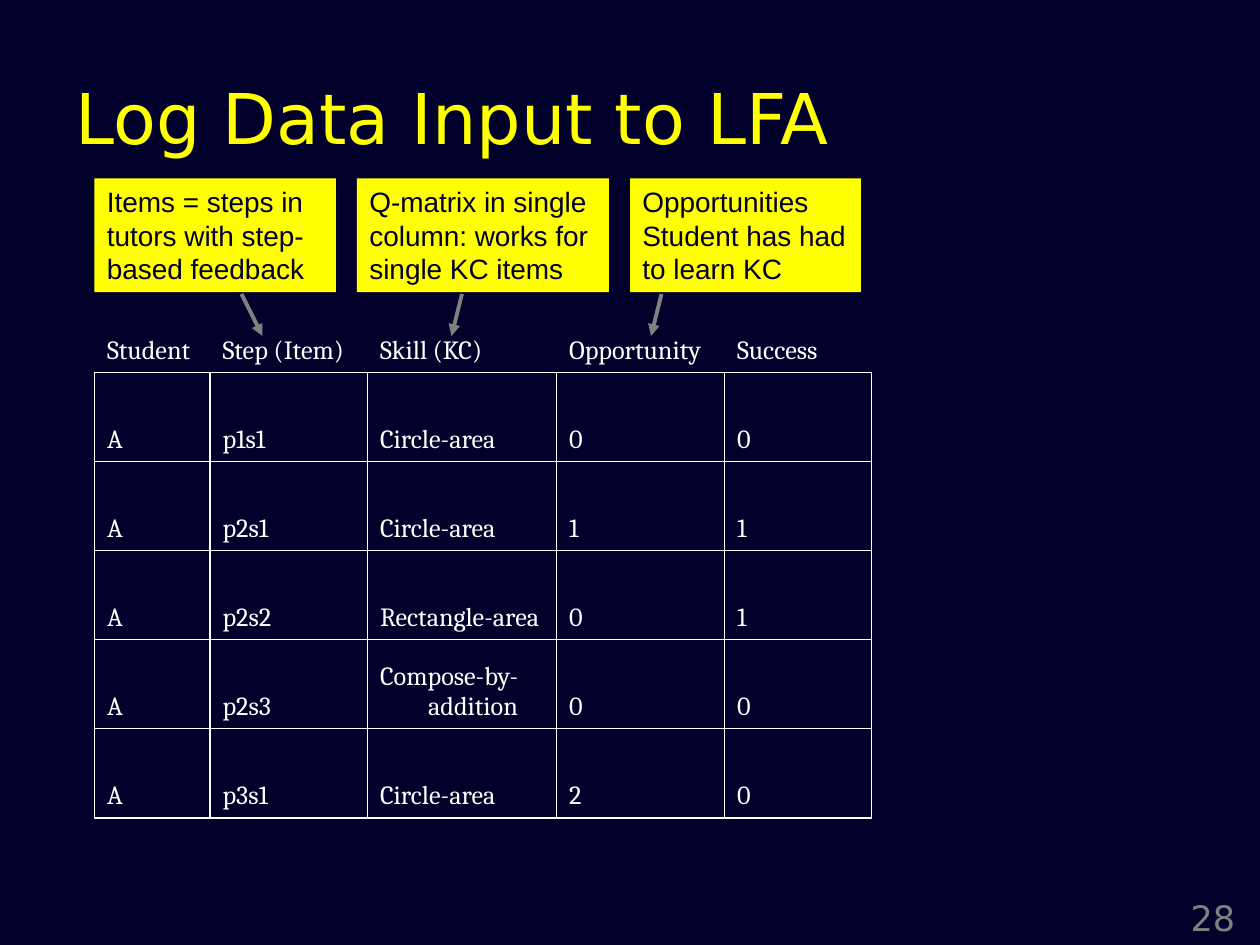
"""Build the slide that shows the log data used as input to LFA."""
import pptx
import pptx.dml.color
import pptx.enum.shapes
import pptx.enum.text
import pptx.oxml
import pptx.oxml.ns
import pptx.util

Pt = pptx.util.Pt
RGBColor = pptx.dml.color.RGBColor
Align = pptx.enum.text.PP_ALIGN
Anchor = pptx.enum.text.MSO_ANCHOR

NAVY = RGBColor(0x01, 0x01, 0x2C)
YELLOW = RGBColor(0xFF, 0xFF, 0x00)
WHITE = RGBColor(0xFF, 0xFF, 0xFF)
GRAY = RGBColor(0x80, 0x80, 0x80)

TITLE = "Log Data Input to LFA"
PAGE_NUMBER = "28"
LOG_ROWS = [
    ("Student", "Step (Item)", "Skill (KC)", "Opportunity", "Success"),
    ("A", "p1s1", "Circle-area", "0", "0"),
    ("A", "p2s1", "Circle-area", "1", "1"),
    ("A", "p2s2", "Rectangle-area", "0", "1"),
    ("A", "p2s3", "Compose-by-addition", "0", "0"),
    ("A", "p3s1", "Circle-area", "2", "0"),
]
COLUMN_WIDTHS = [66, 90, 108, 96, 84]
ROW_HEIGHT = 50.9
TABLE_LEFT, TABLE_TOP = 54, 162
HANGING_INDENT, TAB_STOP = 27.4, 10.1

CALLOUTS = [
    {"text": "Items = steps in tutors with step-based feedback",
     "left": 54, "width": 138, "arrow": (138, 150)},
    {"text": "Q-matrix in single column: works for single KC items",
     "left": 204, "width": 144, "arrow": (264, 258)},
    {"text": "Opportunities Student has had to learn KC",
     "left": 360, "width": 132, "arrow": (378, 372)},
]
CALLOUT_TOP, CALLOUT_HEIGHT = 102, 65
ARROW_TOP, ARROW_BOTTOM = 168, 192


def add_element(parent, xml):
    namespace = pptx.oxml.ns.nsdecls("a")
    element = pptx.oxml.parse_xml(xml.replace("/>", f" {namespace}/>", 1)
                                  if xml.endswith("/>") and xml.count("<") == 1
                                  else xml.replace(">", f" {namespace}>", 1))
    parent.append(element)


def set_font(paragraph, name, size, color, alignment=Align.LEFT):
    paragraph.alignment = alignment
    paragraph.font.name = name
    paragraph.font.size = Pt(size)
    paragraph.font.color.rgb = color


def set_borders(cell, visible_sides):
    properties = cell._tc.get_or_add_tcPr()
    for side in "LRTB":
        paint = (f'<a:solidFill><a:srgbClr val="{WHITE}"/></a:solidFill>'
                 if side in visible_sides else "<a:noFill/>")
        add_element(properties, f'<a:ln{side} w="{Pt(1)}">{paint}</a:ln{side}>')


def set_hanging_indent(paragraph):
    properties = paragraph._p.get_or_add_pPr()
    properties.set("marL", str(Pt(HANGING_INDENT)))
    properties.set("indent", str(-Pt(HANGING_INDENT)))
    add_element(properties, f'<a:tabLst><a:tab pos="{Pt(TAB_STOP)}" algn="l"/></a:tabLst>')


def add_title(slide):
    title = slide.shapes.title
    title.left, title.top, title.width, title.height = Pt(36), Pt(21.6), Pt(648), Pt(90)
    title.text_frame.text = TITLE
    title.text_frame.vertical_anchor = Anchor.MIDDLE
    set_font(title.text_frame.paragraphs[0], "DejaVu Sans", 40, YELLOW)


def add_page_number(slide):
    box = slide.shapes.add_textbox(Pt(673.2), Pt(509), Pt(49), Pt(31))
    box.text_frame.word_wrap = False
    box.text_frame.text = PAGE_NUMBER
    set_font(box.text_frame.paragraphs[0], "DejaVu Sans", 20, GRAY)


def add_log_table(slide):
    table = slide.shapes.add_table(
        len(LOG_ROWS), len(COLUMN_WIDTHS), Pt(TABLE_LEFT), Pt(TABLE_TOP),
        Pt(sum(COLUMN_WIDTHS)), Pt(ROW_HEIGHT * len(LOG_ROWS))).table
    table.first_row = table.horz_banding = False
    for column, width in zip(table.columns, COLUMN_WIDTHS):
        column.width = Pt(width)
    for row_index, values in enumerate(LOG_ROWS):
        table.rows[row_index].height = Pt(ROW_HEIGHT)
        for column_index, value in enumerate(values):
            cell = table.cell(row_index, column_index)
            cell.text = value
            cell.vertical_anchor = Anchor.BOTTOM
            set_borders(cell, "LRTB" if row_index else "B")
            cell.fill.background()
            paragraph = cell.text_frame.paragraphs[0]
            if value != "Step (Item)":
                set_hanging_indent(paragraph)
            alignment = Align.LEFT if value == "Compose-by-addition" else Align.JUSTIFY
            set_font(paragraph, "Cambria", 15, WHITE, alignment)


def add_callout(slide, callout):
    box = slide.shapes.add_shape(
        pptx.enum.shapes.MSO_SHAPE.RECTANGLE, Pt(callout["left"]), Pt(CALLOUT_TOP),
        Pt(callout["width"]), Pt(CALLOUT_HEIGHT))
    box.shadow.inherit = False
    box.fill.solid()
    box.fill.fore_color.rgb = YELLOW
    box.line.fill.background()
    box.text_frame.word_wrap = True
    box.text_frame.vertical_anchor = Anchor.TOP
    box.text_frame.text = callout["text"]
    paragraph = box.text_frame.paragraphs[0]
    paragraph.line_spacing = Pt(19.2)
    set_font(paragraph, "Arial", 16, NAVY)

    start, end = callout["arrow"]
    arrow = slide.shapes.add_connector(
        pptx.enum.shapes.MSO_CONNECTOR.STRAIGHT,
        Pt(start), Pt(ARROW_TOP), Pt(end), Pt(ARROW_BOTTOM))
    arrow.line.color.rgb = GRAY
    arrow.line.width = Pt(2.25)
    add_element(arrow.line._get_or_add_ln(), '<a:tailEnd type="triangle"/>')
    add_element(arrow._element.spPr, "<a:effectLst/>")


def main():
    presentation = pptx.Presentation()
    presentation.slide_width, presentation.slide_height = Pt(720), Pt(540)
    slide = presentation.slides.add_slide(presentation.slide_layouts[5])
    slide.background.fill.solid()
    slide.background.fill.fore_color.rgb = NAVY
    add_page_number(slide)
    add_title(slide)
    add_log_table(slide)
    for callout in CALLOUTS:
        add_callout(slide, callout)
    presentation.save("out.pptx")


if __name__ == "__main__":
    main()
